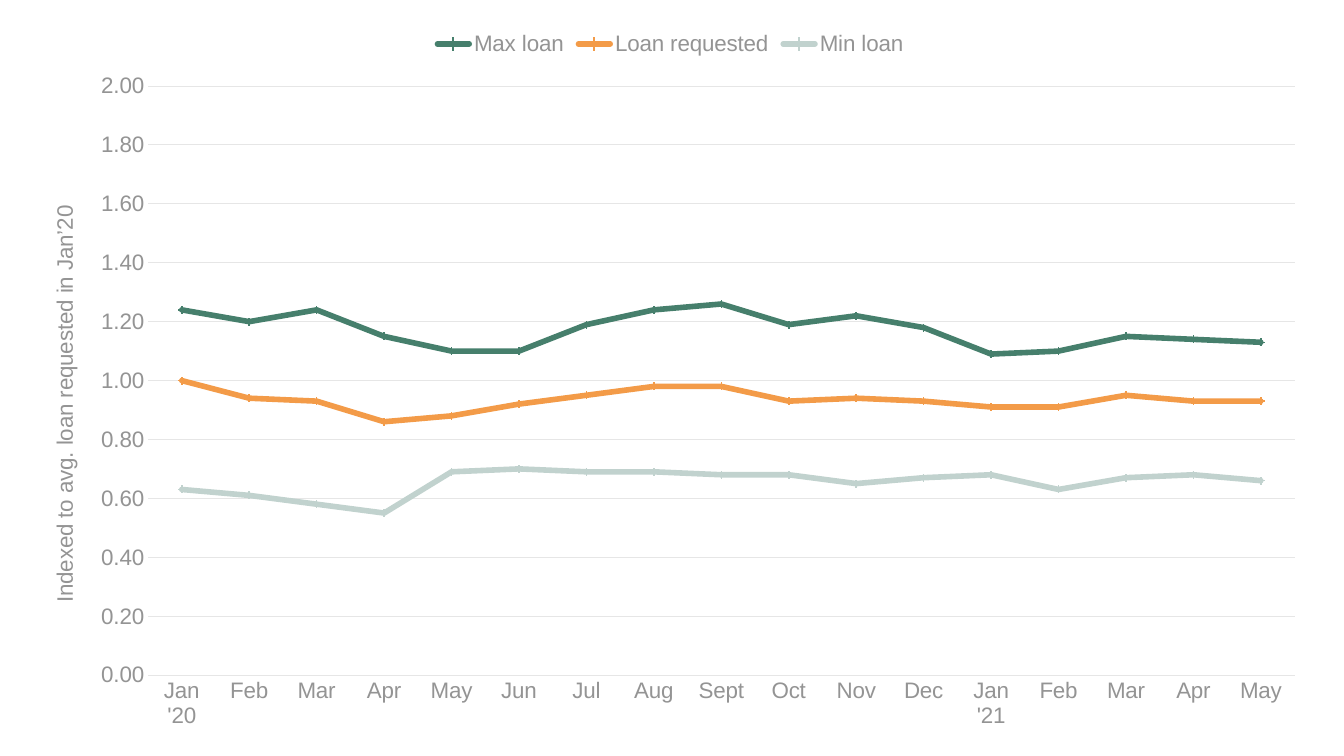
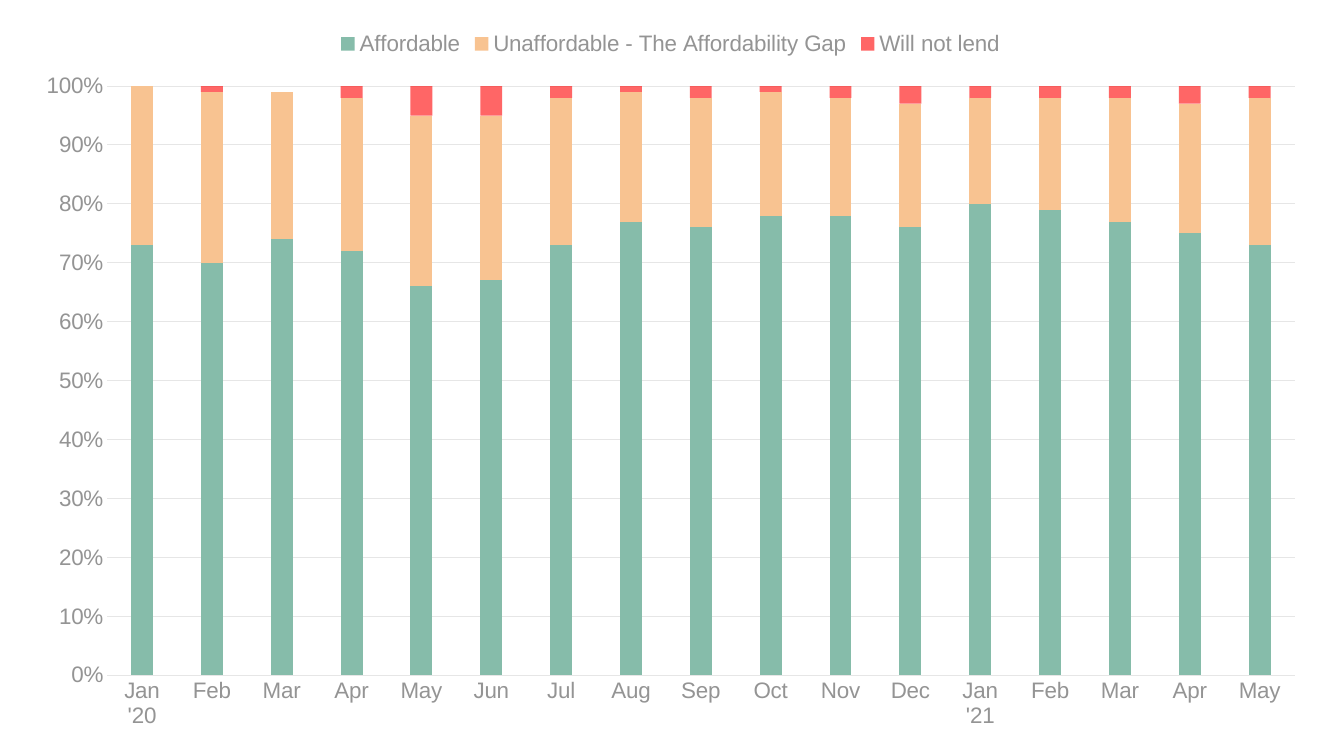
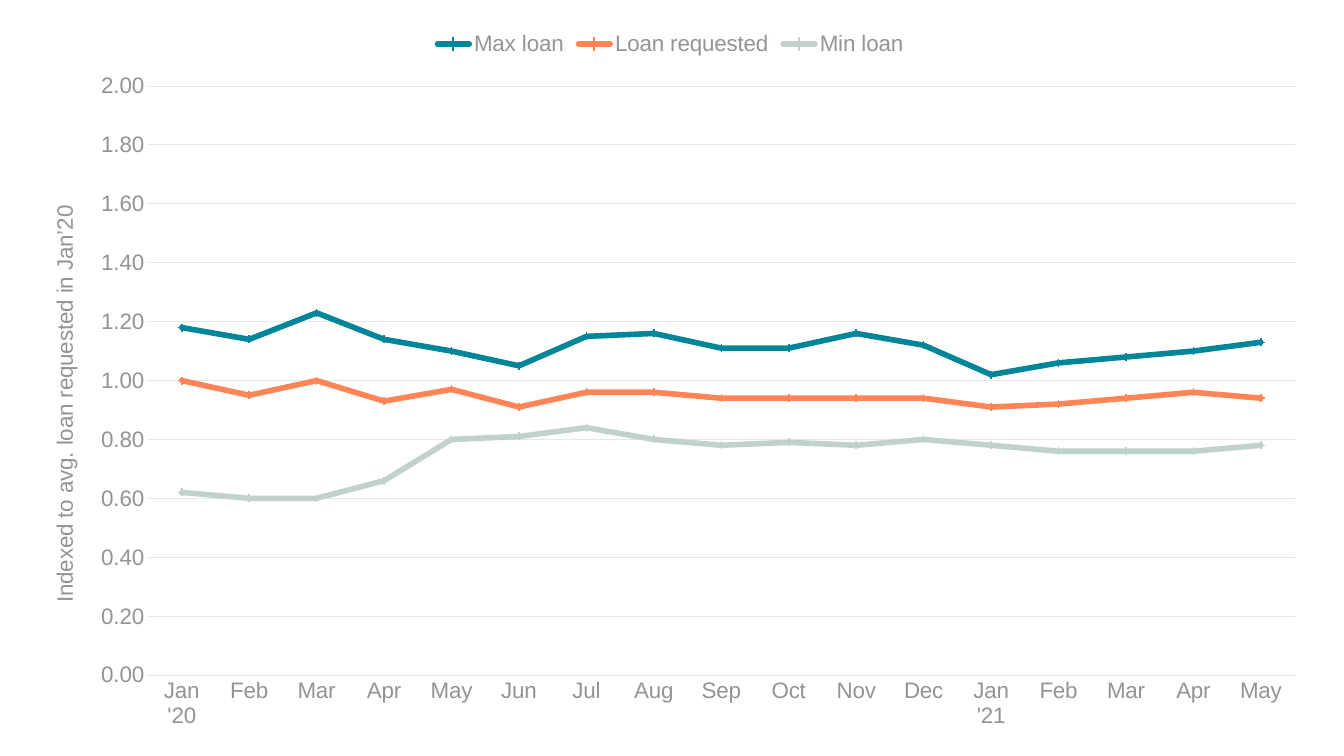
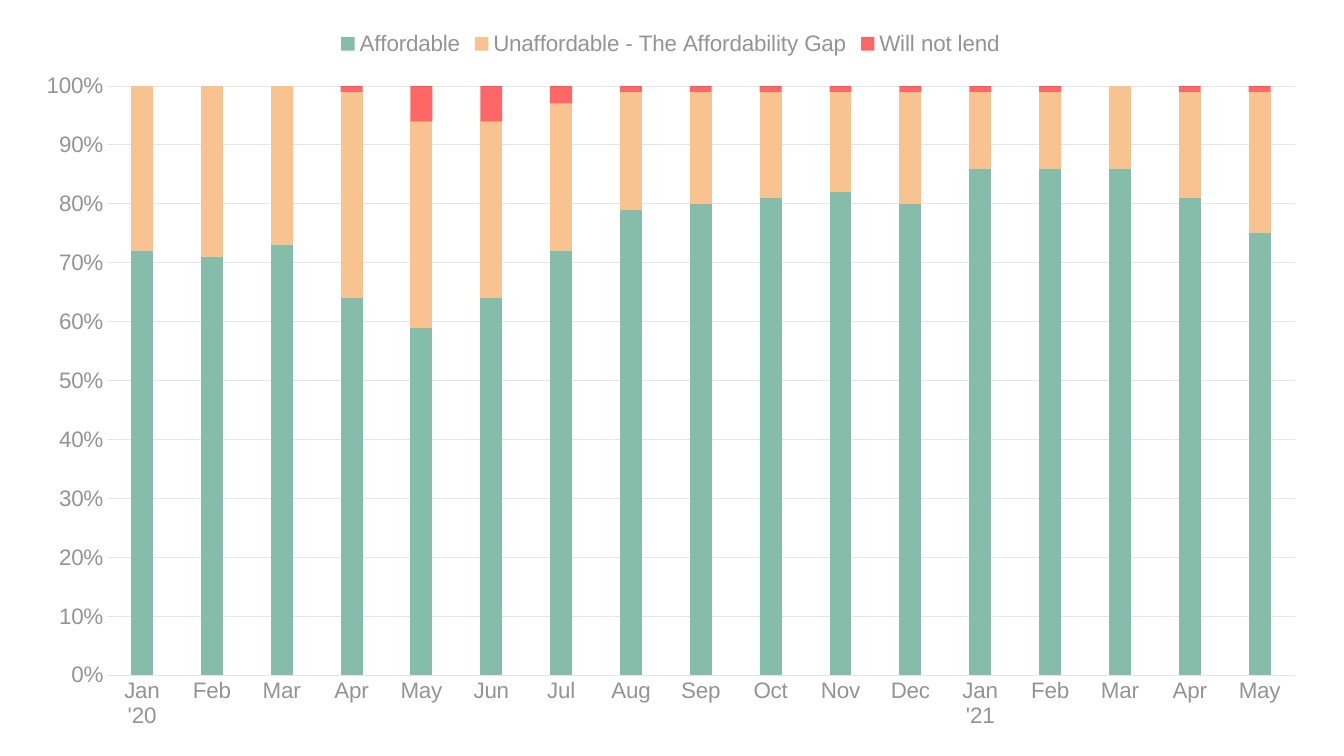
from lxml import etree
from pptx import Presentation, util as u
from pptx.chart.data import CategoryChartData
from pptx.dml.color import RGBColor
from pptx.enum import chart as charts
from pptx.oxml.ns import qn

PX = 9525
FONT = "Arial"
COLORS = {
    "label": "949494", "text": "5B5B5B", "grid": "E6E6E6",
    "forest": "467F6C", "amber": "F39B48", "coral": "FF8456",
    "mist": "C1D2CE", "teal": "008599",
    "sage": "86BCAA", "peach": "F8C391", "red": "FF0000",
}

# Shared chart frame and plot edges, in px
CHART = (19, 19, 1239, 688)
PLOT_TOP, PLOT_RIGHT, PLOT_BOTTOM = 82, 1233, 643
LINE_LEFT, COLUMN_LEFT = 141, 102
TITLE_LEFT, TITLE_TOP = 44, 192

MONTHS = ["Jan '20", "Feb", "Mar", "Apr", "May", "Jun", "Jul", "Aug", "Sep",
          "Oct", "Nov", "Dec", "Jan '21", "Feb", "Mar", "Apr", "May"]
MONTHS_SEPT = ["Sept" if month == "Sep" else month for month in MONTHS]
LOANS = ["Max loan", "Loan requested", "Min loan"]
SHARES = ["Affordable", "Unaffordable - The Affordability Gap", "Will not lend"]
AXIS_TITLE = "Indexed to avg. loan requested in Jan’20"

LOANS_FIRST = [
    [1.24, 1.2, 1.24, 1.15, 1.1, 1.1, 1.19, 1.24, 1.26,
     1.19, 1.22, 1.18, 1.09, 1.1, 1.15, 1.14, 1.13],
    [1, 0.94, 0.93, 0.86, 0.88, 0.92, 0.95, 0.98, 0.98,
     0.93, 0.94, 0.93, 0.91, 0.91, 0.95, 0.93, 0.93],
    [0.63, 0.61, 0.58, 0.55, 0.69, 0.7, 0.69, 0.69, 0.68,
     0.68, 0.65, 0.67, 0.68, 0.63, 0.67, 0.68, 0.66],
]
SHARES_FIRST = [
    [0.73, 0.7, 0.74, 0.72, 0.66, 0.67, 0.73, 0.77, 0.76,
     0.78, 0.78, 0.76, 0.8, 0.79, 0.77, 0.75, 0.73],
    [0.27, 0.29, 0.25, 0.26, 0.29, 0.28, 0.25, 0.22, 0.22,
     0.21, 0.2, 0.21, 0.18, 0.19, 0.21, 0.22, 0.25],
    [0, 0.01, 0, 0.02, 0.05, 0.05, 0.03, 0.01, 0.02,
     0.02, 0.02, 0.03, 0.02, 0.02, 0.02, 0.03, 0.02],
]
LOANS_SECOND = [
    [1.18, 1.14, 1.23, 1.14, 1.1, 1.05, 1.15, 1.16, 1.11,
     1.11, 1.16, 1.12, 1.02, 1.06, 1.08, 1.1, 1.13],
    [1, 0.95, 1, 0.93, 0.97, 0.91, 0.96, 0.96, 0.94,
     0.94, 0.94, 0.94, 0.91, 0.92, 0.94, 0.96, 0.94],
    [0.62, 0.6, 0.6, 0.66, 0.8, 0.81, 0.84, 0.8, 0.78,
     0.79, 0.78, 0.8, 0.78, 0.76, 0.76, 0.76, 0.78],
]
SHARES_SECOND = [
    [0.72, 0.71, 0.73, 0.64, 0.59, 0.64, 0.72, 0.79, 0.8,
     0.81, 0.82, 0.8, 0.86, 0.86, 0.86, 0.81, 0.75],
    [0.28, 0.29, 0.27, 0.35, 0.35, 0.3, 0.25, 0.2, 0.19,
     0.18, 0.17, 0.19, 0.13, 0.13, 0.14, 0.18, 0.24],
    [0, 0, 0, 0.01, 0.06, 0.06, 0.03, 0.01, 0.01,
     0.01, 0.01, 0.01, 0.01, 0.01, 0.01, 0.01, 0.01],
]


def rgb(name):
    return RGBColor.from_string(COLORS[name])


def style_font(font, color="label", size=16, bold=False):
    font.name, font.size, font.bold = FONT, u.Pt(size), bold
    font.color.rgb = rgb(color)


def set_text(frame, text, **format):
    span = frame.paragraphs[0].add_run()
    span.text = text
    style_font(span.font, **format)


def style_line(line, color, width):
    line.color.rgb = rgb(color)
    line.width = u.Pt(width)


def place(parent, index, left, top, right=None, bottom=None):
    """Pin a chart part to slide px through a manual layout."""
    layout = parent.find(qn("c:layout"))
    if layout is not None:
        parent.remove(layout)
    layout = etree.Element(qn("c:layout"))
    parent.insert(index, layout)
    manual = etree.SubElement(layout, qn("c:manualLayout"))
    chart_left, chart_top, width, height = CHART
    values = {"xMode": "edge", "yMode": "edge",
              "x": (left - chart_left) / width, "y": (top - chart_top) / height}
    if right is not None:
        values = {"layoutTarget": "inner", **values,
                  "w": (right - left) / width, "h": (bottom - top) / height}
    for tag, value in values.items():
        etree.SubElement(manual, qn(f"c:{tag}")).set("val", str(value))


def style_axes(chart, maximum, step, number_format):
    months, values = chart.category_axis, chart.value_axis
    for axis in (months, values):
        axis.major_tick_mark = axis.minor_tick_mark = charts.XL_TICK_MARK.NONE
        style_font(axis.tick_labels.font)
    style_line(months.format.line, "grid", 0.75)
    values.format.line.fill.background()
    values.minimum_scale, values.maximum_scale = 0, maximum
    values.major_unit = step
    values.has_major_gridlines = True
    style_line(values.major_gridlines.format.line, "grid", 0.75)
    values.tick_labels.number_format = number_format
    values.tick_labels.number_format_is_linked = False


def add_chart(deck, kind, months, names, rows, plot_left):
    """Add a slide holding one chart, with the legend on top."""
    page = deck.slides.add_slide(deck.slide_layouts[6])
    data = CategoryChartData()
    data.categories = months
    for name, row in zip(names, rows):
        data.add_series(name, row)
    box = [length * PX for length in CHART]
    chart = page.shapes.add_chart(kind, *box, data).chart
    chart.has_title = False
    style_font(chart.font, color="text")
    chart.has_legend = True
    chart.legend.position = charts.XL_LEGEND_POSITION.TOP
    chart.legend.include_in_layout = False
    style_font(chart.legend.font)
    chart.plots[0].vary_by_categories = False
    plot_area = chart.plots[0]._element.getparent()
    place(plot_area, 0, plot_left, PLOT_TOP, PLOT_RIGHT, PLOT_BOTTOM)
    return chart


def add_axis_title(axis, text):
    title = axis.axis_title
    set_text(title.text_frame, text)
    body = title._element.find(".//" + qn("a:bodyPr"))
    body.set("rot", "-5400000")
    body.set("vert", "horz")
    place(title._element, 1, TITLE_LEFT, TITLE_TOP)


def add_loan_chart(deck, months, rows, colors, marker_colors):
    chart = add_chart(deck, charts.XL_CHART_TYPE.LINE_MARKERS, months, LOANS,
                      rows, LINE_LEFT)
    style_axes(chart, 2, 0.2, "0.00")
    add_axis_title(chart.value_axis, AXIS_TITLE)
    for series, color, marker_color in zip(chart.series, colors, marker_colors):
        series.smooth = False
        style_line(series.format.line, color, 4)
        series.format.line._ln.set("cap", "rnd")
        marker = series.marker
        marker.style, marker.size = charts.XL_MARKER_STYLE.PLUS, 5
        marker.format.fill.background()
        style_line(marker.format.line, marker_color, 0.75)


def add_share_chart(deck, rows):
    chart = add_chart(deck, charts.XL_CHART_TYPE.COLUMN_STACKED, MONTHS, SHARES,
                      rows, COLUMN_LEFT)
    style_axes(chart, 1, 0.1, "0%")
    chart.plots[0].gap_width, chart.plots[0].overlap = 219, 100
    for series, color in zip(chart.series, ("sage", "peach", "red")):
        series.invert_if_negative = False
        series.format.fill.solid()
        series.format.fill.fore_color.rgb = rgb(color)
    # The last series, red, is 60% opaque
    tone = series._element.find(".//" + qn("a:srgbClr"))
    etree.SubElement(tone, qn("a:alpha")).set("val", "60000")


def main():
    deck = Presentation()
    deck.slide_width, deck.slide_height = 1280 * PX, 720 * PX
    add_loan_chart(deck, MONTHS_SEPT, LOANS_FIRST,
                   ("forest", "amber", "mist"), ("forest", "coral", "mist"))
    add_share_chart(deck, SHARES_FIRST)
    second_colors = ("teal", "coral", "mist")
    add_loan_chart(deck, MONTHS, LOANS_SECOND, second_colors, second_colors)
    add_share_chart(deck, SHARES_SECOND)
    deck.save("out.pptx")


if __name__ == "__main__":
    main()
